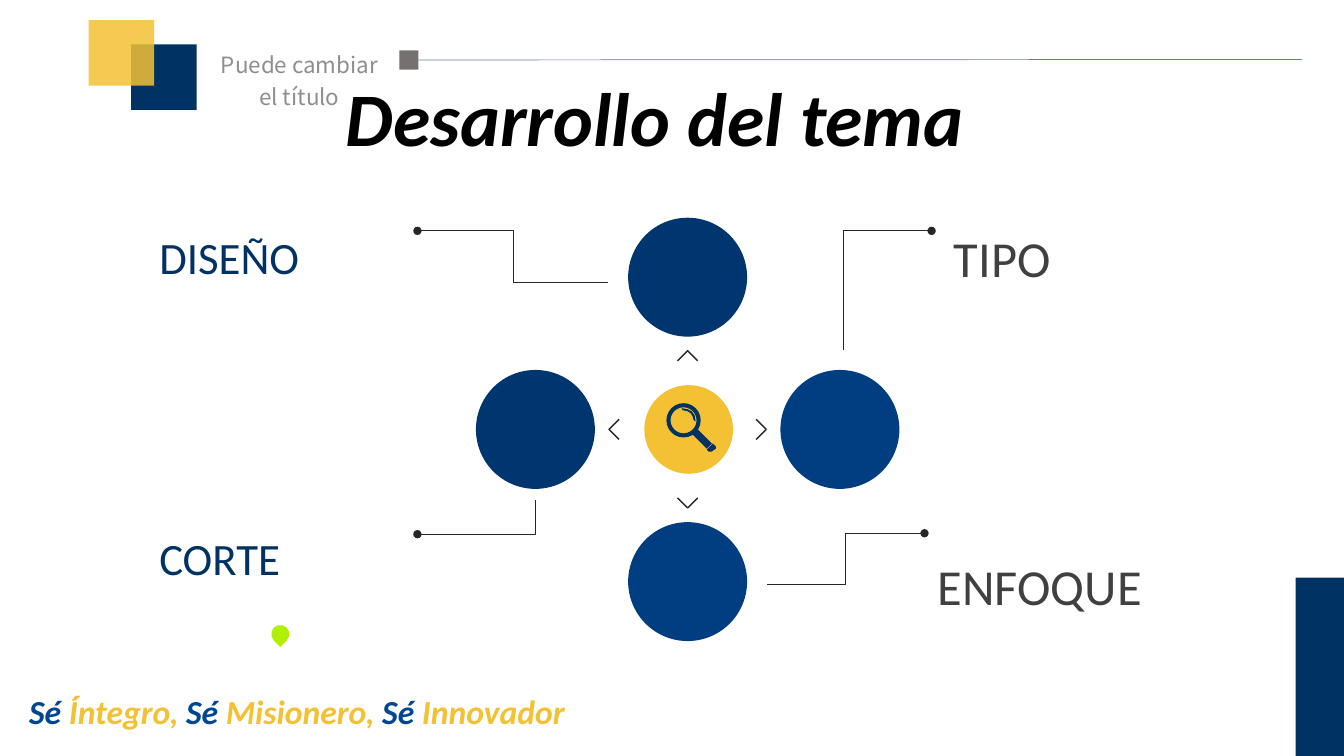
from lxml import etree
from pptx import Presentation
from pptx.dml.color import RGBColor
from pptx.enum.shapes import MSO_CONNECTOR, MSO_SHAPE
from pptx.enum.text import MSO_ANCHOR, PP_ALIGN
from pptx.oxml.ns import qn
from pptx.util import Inches, Pt

RECT, OVAL = MSO_SHAPE.RECTANGLE, MSO_SHAPE.OVAL
DONUT, TEAR = MSO_SHAPE.DONUT, MSO_SHAPE.TEAR
STRAIGHT = MSO_CONNECTOR.STRAIGHT
LEFT, CENTER = PP_ALIGN.LEFT, PP_ALIGN.CENTER
TOP, BOTTOM = MSO_ANCHOR.TOP, MSO_ANCHOR.BOTTOM
NAVY, DARK, BLUE, ROYAL = "003264", "003670", "003E81", "004692"
GOLD, INK, GRAY = "F3C133", "262626", "404040"

deck = Presentation()
deck.slide_width, deck.slide_height = Inches(13.33), Inches(7.5)
shapes = deck.slides.add_slide(deck.slide_layouts[6]).shapes
rgb = RGBColor.from_string


def add(kind, x, y, w, h, fill):
    shape = shapes.add_shape(kind, Inches(x), Inches(y), Inches(w), Inches(h))
    shape.shadow.inherit = False
    shape.fill.solid()
    shape.fill.fore_color.rgb = rgb(fill)
    shape.line.fill.background()
    return shape


def trace(points, fill=None, width=1):
    spots = [(Inches(x), Inches(y)) for x, y in points]
    pen = shapes.build_freeform(*spots[0], scale=1.0)
    pen.add_line_segments(spots[1:], close=fill is not None)
    shape = pen.convert_to_shape()
    shape.shadow.inherit = False
    if fill:
        shape.fill.solid()
        shape.fill.fore_color.rgb = rgb(fill)
        shape.line.fill.background()
    else:
        shape.fill.background()
        shape.line.color.rgb = rgb(INK)
        shape.line.width = Pt(width)
    return shape


# Header rule
knob = add(RECT, 3.96, 0.5, 0.19, 0.19, "767171")
rule = shapes.add_connector(STRAIGHT, Inches(12.91), Inches(0.59), Inches(4.15), Inches(0.59))
rule.end_connect(knob, 3)
rule.line.color.rgb = rgb("657D9D")
rule.line.width = Pt(0.5)
etree.SubElement(rule.element.spPr, qn("a:effectLst"))

# Corner squares, side bar and green drop
add(RECT, 1.3, 0.44, 0.65, 0.65, NAVY)
square = add(RECT, 0.88, 0.2, 0.65, 0.65, GOLD)
tint = square.element.spPr.find(qn("a:solidFill"))[0]
etree.SubElement(tint, qn("a:alpha"), val="85000")
add(RECT, 12.85, 5.73, 0.48, 1.77, NAVY)
drop = add(TEAR, 2.69, 6.2, 0.18, 0.18, "AFF000")
drop.rotation = 135

# Hub, four circles around it and the chevrons between
cx, cy = 6.82, 4.26
add(OVAL, 6.39, 3.82, 0.88, 0.88, GOLD)
for dx, dy, fill in [(0, -1, DARK), (1, 0, BLUE), (-1, 0, DARK), (0, 1, BLUE)]:
    add(OVAL, cx + 1.51 * dx - 0.59, cy + 1.51 * dy - 0.59, 1.18, 1.18, fill)
    tip = (cx + 0.78 * dx, cy + 0.78 * dy)
    base = (cx + 0.68 * dx, cy + 0.68 * dy)
    side = (0.1 * dy, 0.1 * dx)
    trace([(base[0] - side[0], base[1] - side[1]), tip,
           (base[0] + side[0], base[1] + side[1])])

# Leader lines with a dot at the label end
leaders = [
    [(6.03, 2.8), (5.09, 2.8), (5.09, 2.29), (4.14, 2.29)],
    [(8.37, 3.47), (8.37, 2.29), (9.24, 2.29)],
    [(7.61, 5.8), (8.39, 5.8), (8.39, 5.29), (9.17, 5.29)],
    [(5.31, 4.96), (5.31, 5.3), (4.14, 5.3)],
]
for points in leaders:
    leader = trace(points, width=0.75)
    line = leader.element.spPr.find(qn("a:ln"))
    etree.SubElement(line, qn("a:tailEnd"), type="oval")

# Magnifier: lens, handle, tip and glint
lens = add(DONUT, 6.61, 4, 0.34, 0.34, NAVY)
lens.adjustments[0] = 0.12
parts = [
    [(6.91, 4.25), (7.06, 4.4), (7.01, 4.45), (6.86, 4.3)],
    [(7.07, 4.4), (7.1, 4.43), (7.1, 4.45), (7.06, 4.48), (7.03, 4.48), (7.01, 4.46)],
    [(6.76, 4.05), (6.82, 4.06), (6.86, 4.08), (6.89, 4.12), (6.9, 4.18),
     (6.88, 4.17), (6.87, 4.13), (6.85, 4.1), (6.82, 4.08), (6.77, 4.07)],
]
for points in parts:
    trace(points, NAVY)

# Texts: place, runs, size, font, bold italic, inset, frame and paragraph format
motto = [("Sé", ROYAL), (" Íntegro, ", GOLD), ("Sé", ROYAL),
         (" Misionero, ", GOLD), ("Sé", ROYAL), (" Innovador", GOLD)]
plain = {"word_wrap": True, "vertical_anchor": TOP}
loose = {"alignment": LEFT, "line_spacing": 1.2}
texts = [
    ((2.1, 0.45, 1.74, 0.36), [("Puede cambiar el título", "8E8E8E")], 16,
     "Noto Sans CJK SC", False, False, plain, {"alignment": CENTER, "line_spacing": 1.2}),
    ((9.46, 2.13, 1.65, 0.68), [("TIPO", GRAY)], 36, "Calibri", False, False, plain, loose),
    ((9.3, 5.39, 2.33, 0.68), [("ENFOQUE", GRAY)], 36, "Calibri", False, False, plain, loose),
    ((1.58, 5.16, 2.33, 0.6), [("CORTE", NAVY)], 32, "Calibri", False, False, plain, loose),
    ((1.58, 2.17, 2.33, 0.6), [("DISEÑO", NAVY)], 32, "Calibri", False, False, plain, loose),
    ((0.19, 6.81, 5.56, 0.5), motto, 24, "Calibri", True, True,
     {"word_wrap": False, "vertical_anchor": TOP}, {"alignment": LEFT}),
    ((1.17, 0.53, 10.65, 1.13), [("Desarrollo del tema", "000000")], 54, "Calibri", True, True,
     {"word_wrap": True, "vertical_anchor": BOTTOM}, {"alignment": CENTER, "line_spacing": 0.9}),
]
for place, runs, size, face, strong, inset, frame, para in texts:
    body = shapes.add_textbox(*map(Inches, place)).text_frame
    if not inset:
        frame = {**frame, "margin_left": 0, "margin_top": 0,
                 "margin_right": 0, "margin_bottom": 0}
    for name, value in frame.items():
        setattr(body, name, value)
    first = body.paragraphs[0]
    for name, value in para.items():
        setattr(first, name, value)
    style = {"size": Pt(size), "name": face, "bold": strong, "italic": strong}
    for words, color in runs:
        run = first.add_run()
        run.text = words
        run.font.color.rgb = rgb(color)
        for name, value in style.items():
            setattr(run.font, name, value)

deck.save("out.pptx")
